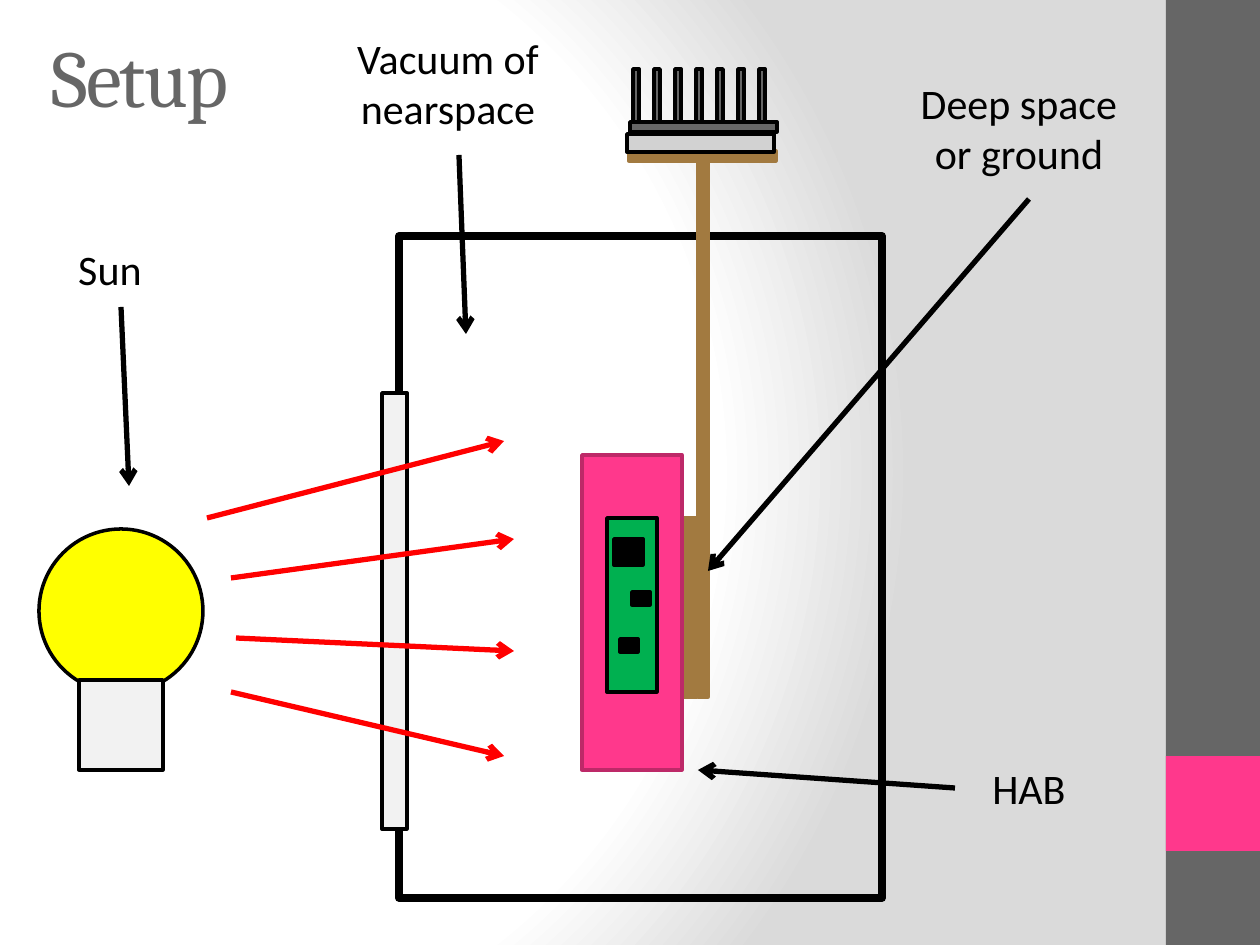
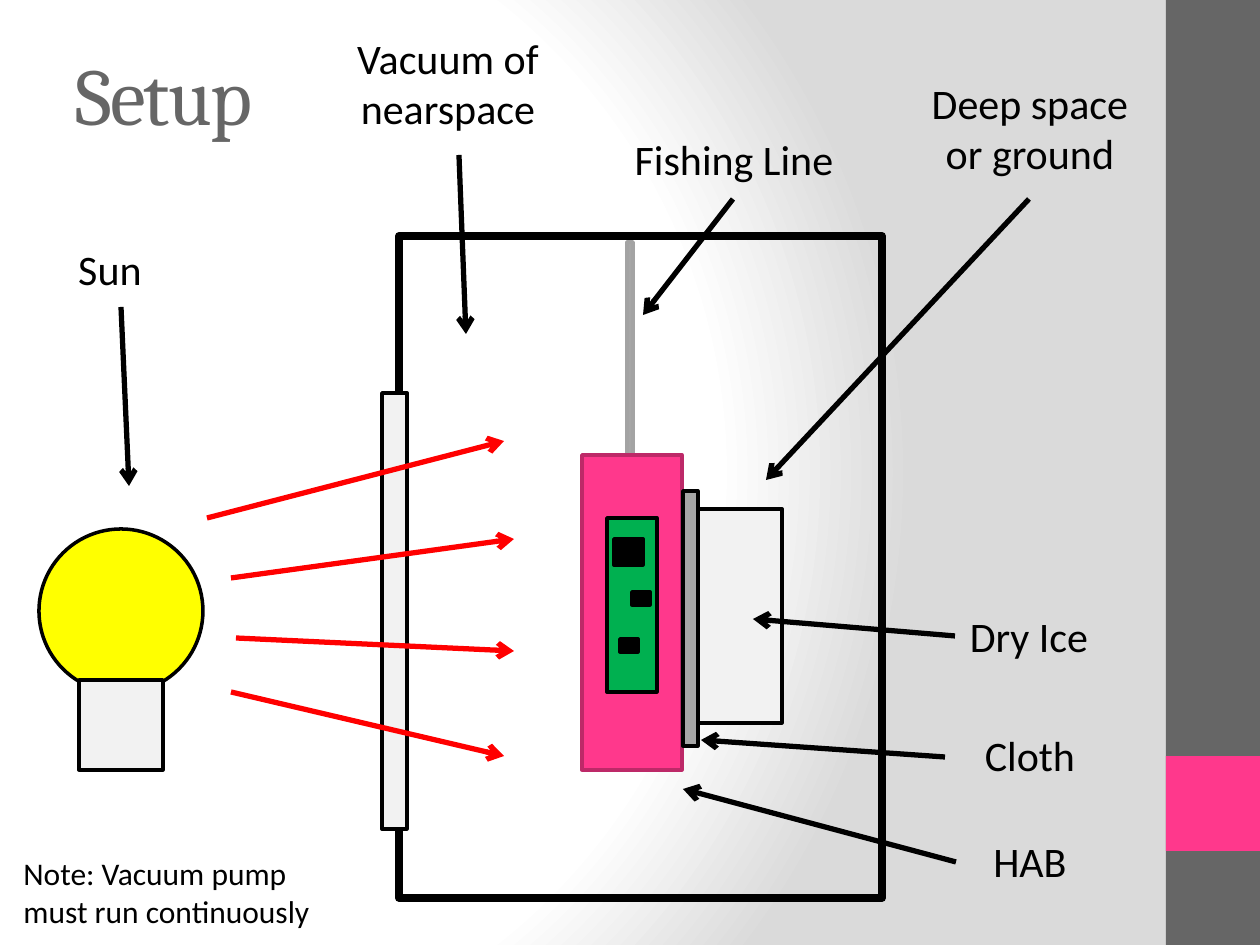
from lxml import etree
from pptx import Presentation
from pptx.dml.color import RGBColor
from pptx.enum.shapes import MSO_CONNECTOR as CONN, MSO_SHAPE as SHAPE
from pptx.enum.text import MSO_ANCHOR as ANCHOR, MSO_AUTO_SIZE as AUTO, PP_ALIGN as ALIGN
from pptx.oxml import parse_xml
from pptx.oxml.ns import nsdecls, qn
from pptx.util import Pt

PX = 914400 / 126
W, H = 1260, 945

# Colours
BLACK, RED, PINK, GREY = "000000", "FF0000", "FF388C", "666666"
WOOD, PALE, LINE_GREY = "A27A40", "F2F2F2", "A6A6A6"

# Text formats
TITLE = dict(size=46, name="Cambria", color=GREY)
LABEL = dict(size=24, name="Calibri", color=BLACK)
NOTE = dict(LABEL, size=18)

# Content shared by both slides; parts are (box, fill, line colour, line width)
BANDS = [((1166, 0, 94, H), GREY, None, 0),
         ((1166, 756, 94, 95), PINK, None, 0)]
CHAMBER = [((399, 236, 483, 662), None, BLACK, 4.5)]
PAYLOAD = [((582, 455, 100, 315), PINK, "BD2968", 2),
           ((607, 518, 50, 174), "00B050", BLACK, 2)]
CHIPS = [((x, y, w, h), BLACK, BLACK, 2) for x, y, w, h in
         [(614, 539, 29, 26), (632, 592, 18, 13), (620, 639, 18, 13)]]
WINDOW = [((382, 393, 25, 436), PALE, BLACK, 2)]
BULB = ((39, 529, 164, 164), "FFFF00", BLACK, 2)
BULB_BASE = [((79, 680, 84, 90), PALE, BLACK, 2)]
RAYS = [(207, 518, 504, 441), (231, 578, 514, 539),
        (236, 638, 514, 651), (231, 692, 504, 756)]

# Callouts: (text, label left, label top, lines, arrow)
CALLOUTS = [("Sun", -4, 237, 1, (121, 307, 129, 486)),
            ("Vacuum of nearspace", 334, 26, 2, (459, 155, 466, 334))]
LABEL_W, LABEL_H = 228, {1: 63, 2: 115}

# Cold finger and heat sink of the first setup
FINS = 7
COLD_FINGER = [(box, WOOD, WOOD, 2) for box in
               [(698, 161, 10, 536), (682, 518, 15, 179), (629, 151, 147, 10)]]
HEAT_SINK = [((627, 134, 147, 18), "D2D2D2", BLACK, 2),
             ((630, 122, 147, 10), GREY, BLACK, 2)]
HEAT_SINK += [((633 + 21 * i, 69, 6, 53), GREY, BLACK, 2) for i in range(FINS)]

SLIDES = [
    dict(title=(39, 20, 266, 110), behind=COLD_FINGER, front=HEAT_SINK, note=None,
         callouts=[("Deep space or ground", 905, 71, 2, (1029, 199, 708, 571)),
                   ("HAB", 915, 756, 1, (955, 788, 698, 770))]),
    dict(title=(63, 38, 1050, 110),
         behind=[((627, 242, 6, 214), LINE_GREY, "A3A3A3", 2)],
         front=[((683, 491, 15, 255), LINE_GREY, BLACK, 2),
                ((698, 509, 84, 214), PALE, BLACK, 2)],
         note=("Note: Vacuum pump must run continuously", (11, 848, 323, 89)),
         callouts=[("Deep space or ground", 916, 71, 2, (1029, 199, 766, 480)),
                   ("HAB", 916, 829, 1, (956, 862, 683, 789)),
                   ("Dry Ice", 915, 604, 1, (955, 636, 753, 619)),
                   ("Cloth", 916, 723, 1, (945, 757, 701, 740)),
                   ("Fishing Line", 620, 127, 1, (733, 199, 643, 315))]),
]


def px(*values):
    return [round(v * PX) for v in values]


def rgb(color):
    return RGBColor.from_string(color)


def set_background(s):
    stops = "".join(f'<a:gs pos="{pos}"><a:srgbClr val="{color}"/></a:gs>' for pos, color in
                    [(0, "FFFFFF"), (75000, "FFFFFF"), (100000, "DADADA")])
    s.element.cSld.insert(0, parse_xml(
        f'<p:bg {nsdecls("p", "a")}><p:bgPr><a:gradFill rotWithShape="1">'
        f'<a:gsLst>{stops}</a:gsLst><a:path path="circle">'
        '<a:fillToRect l="20000" t="50000" r="100000" b="50000"/></a:path>'
        '</a:gradFill><a:effectLst/></p:bgPr></p:bg>'))


def add_part(s, box, fill, line, width, kind=SHAPE.RECTANGLE):
    sp = s.shapes.add_shape(kind, *px(*box))
    sp.shadow.inherit = False
    if fill:
        sp.fill.solid()
        sp.fill.fore_color.rgb = rgb(fill)
    else:
        sp.fill.background()
    if line:
        sp.line.color.rgb = rgb(line)
        sp.line.width = Pt(width)
    else:
        sp.line.fill.background()


def add_parts(s, parts):
    for part in parts:
        add_part(s, *part)


def add_arrow(s, ends, color):
    c = s.shapes.add_connector(CONN.STRAIGHT, *px(*ends))
    c.line.color.rgb = rgb(color)
    c.line.width = Pt(3)
    etree.SubElement(c.line._get_or_add_ln(), qn("a:tailEnd"), type="arrow")
    etree.SubElement(c.element.spPr, qn("a:effectLst"))


def add_text(s, text, box, fmt, align=ALIGN.LEFT, **frame):
    tf = s.shapes.add_textbox(*px(*box)).text_frame
    for key, value in dict(word_wrap=True, **frame).items():
        setattr(tf, key, value)
    p = tf.paragraphs[0]
    p.alignment = align
    r = p.add_run()
    r.text = text
    r.font.size = Pt(fmt["size"])
    r.font.name = fmt["name"]
    r.font.color.rgb = rgb(fmt["color"])
    return r


def build_slide(prs, data):
    s = prs.slides.add_slide(prs.slide_layouts[6])
    set_background(s)
    add_parts(s, BANDS)
    r = add_text(s, "Setup", data["title"], TITLE, vertical_anchor=ANCHOR.MIDDLE)
    r.font._element.set("spc", "-100")

    # Apparatus, from back to front
    add_parts(s, CHAMBER + data["behind"] + PAYLOAD + CHIPS + WINDOW)
    add_part(s, *BULB, kind=SHAPE.OVAL)
    add_parts(s, BULB_BASE + data["front"])
    for ray in RAYS:
        add_arrow(s, ray, RED)

    # Callouts and note
    for text, x, y, lines, arrow in CALLOUTS + data["callouts"]:
        add_arrow(s, arrow, BLACK)
        add_text(s, text, (x, y, LABEL_W, LABEL_H[lines]), LABEL, ALIGN.CENTER,
                 auto_size=AUTO.SHAPE_TO_FIT_TEXT)
    if data["note"]:
        add_text(s, *data["note"], NOTE, auto_size=AUTO.SHAPE_TO_FIT_TEXT)


def main():
    prs = Presentation()
    prs.slide_width, prs.slide_height = px(W, H)
    for data in SLIDES:
        build_slide(prs, data)
    prs.save("out.pptx")


if __name__ == "__main__":
    main()
